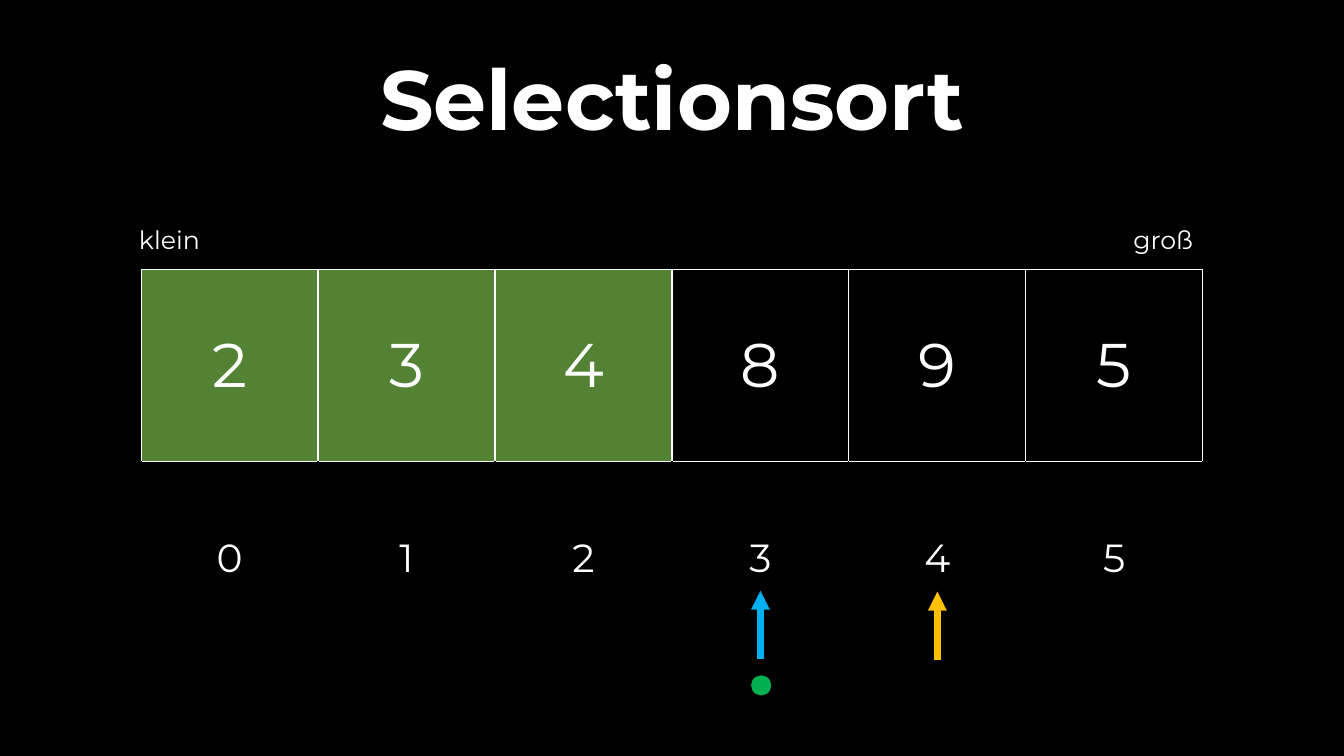
from lxml import etree
from pptx import Presentation
from pptx.dml.color import RGBColor
from pptx.enum.shapes import MSO_CONNECTOR, MSO_SHAPE
from pptx.enum.text import MSO_ANCHOR, PP_ALIGN
from pptx.oxml.ns import qn
from pptx.util import Inches, Pt

LEFT, CENTER, RIGHT = PP_ALIGN.LEFT, PP_ALIGN.CENTER, PP_ALIGN.RIGHT
TOP, MIDDLE = MSO_ANCHOR.TOP, MSO_ANCHOR.MIDDLE
STRAIGHT, OVAL = MSO_CONNECTOR.STRAIGHT, MSO_SHAPE.OVAL

THEME = {
    "font": "Montserrat",
    "black": "000000", "white": "FFFFFF", "sorted": "548235",
    "current": "00B0F0", "compare": "FFC000", "minimum": "00B050",
    "title": 60, "value": 44, "index": 28, "label": 18,
}
VALUES = [2, 3, 4, 8, 9, 5]
SORTED_COUNT = 3
CURRENT, COMPARE = 3, 4

SLIDE_WIDTH, SLIDE_HEIGHT = 13.33, 7.5
TABLE_LEFT, TABLE_TOP = 1.4, 2.67
TABLE_WIDTH = SLIDE_WIDTH - 2 * TABLE_LEFT
COLUMN, ROW = TABLE_WIDTH / len(VALUES), 1.91


def color(name):
    return RGBColor.from_string(THEME[name])


def write(frame, text, size, align=CENTER, anchor=MIDDLE, bold=False):
    """Put one white paragraph into a text frame or table cell and return it."""
    frame.vertical_anchor = anchor
    para = getattr(frame, "text_frame", frame).paragraphs[0]
    para.alignment = align
    span = para.add_run()
    span.text = text
    style = {"name": THEME["font"], "size": Pt(THEME[size]), "bold": bold}
    for key, value in style.items():
        setattr(span.font, key, value)
    span.font.color.rgb = color("white")
    return para


deck = Presentation()
deck.slide_width, deck.slide_height = Inches(SLIDE_WIDTH), Inches(SLIDE_HEIGHT)
slide = deck.slides.add_slide(deck.slide_layouts[6])
slide.background.fill.solid()
slide.background.fill.fore_color.rgb = color("black")

# Array values above their indices
table = slide.shapes.add_table(
    2, len(VALUES), Inches(TABLE_LEFT), Inches(TABLE_TOP),
    Inches(TABLE_WIDTH), Inches(2 * ROW)).table
table.first_row = table.horz_banding = False
for column in table.columns:
    column.width = Inches(COLUMN)
for row in table.rows:
    row.height = Inches(ROW)

for position, value in enumerate(VALUES):
    fill = "sorted" if position < SORTED_COUNT else "black"
    entries = [(value, "value", fill, "white"), (position, "index", "black", "black")]
    for row_number, (number, size, fill, border) in enumerate(entries):
        cell = table.cell(row_number, position)
        write(cell, str(number), size)
        properties = cell._tc.get_or_add_tcPr()
        for side in ("lnL", "lnR", "lnT", "lnB"):
            edge = etree.SubElement(properties, qn(f"a:{side}"), w=str(Pt(1)))
            paint = etree.SubElement(edge, qn("a:solidFill"))
            edge_color = THEME["white" if side == "lnT" else border]
            etree.SubElement(paint, qn("a:srgbClr"), val=edge_color)
        cell.fill.solid()
        cell.fill.fore_color.rgb = color(fill)

# Title and the labels at both ends of the array
texts = [
    ("Selectionsort", "title", 0.15, 0.31, 13.03, 1.42, CENTER, MIDDLE, True),
    ("klein", "label", 1.28, 2.18, 1.51, 0.4, LEFT, TOP, False),
    ("groß", "label", 10.42, 2.18, 1.51, 0.4, RIGHT, TOP, False),
]
for text, size, left, top, width, height, align, anchor, bold in texts:
    box = slide.shapes.add_textbox(
        Inches(left), Inches(top), Inches(width), Inches(height))
    box.text_frame.word_wrap = True
    para = write(box.text_frame, text, size, align, anchor, bold)
    if size == "title":
        para.line_spacing, para.space_before = 0.9, Pt(10)

# Pointers below the indices
for position, name, tip in [(CURRENT, "current", 5.86), (COMPARE, "compare", 5.87)]:
    center = Inches(TABLE_LEFT + (position + 0.5) * COLUMN)
    arrow = slide.shapes.add_connector(
        STRAIGHT, center, Inches(tip + 0.68), center, Inches(tip))
    arrow.line.width = Pt(4.5)
    arrow.line.color.rgb = color(name)
    etree.SubElement(arrow.line._get_or_add_ln(), qn("a:tailEnd"), type="triangle")
    etree.SubElement(arrow._element.spPr, qn("a:effectLst"))

# Marker of the smallest value found so far
dot = slide.shapes.add_shape(OVAL, Inches(7.45), Inches(6.7), Inches(0.2), Inches(0.2))
dot.shadow.inherit = False
dot.fill.solid()
dot.fill.fore_color.rgb = color("minimum")
dot.line.fill.background()

deck.save("out.pptx")
